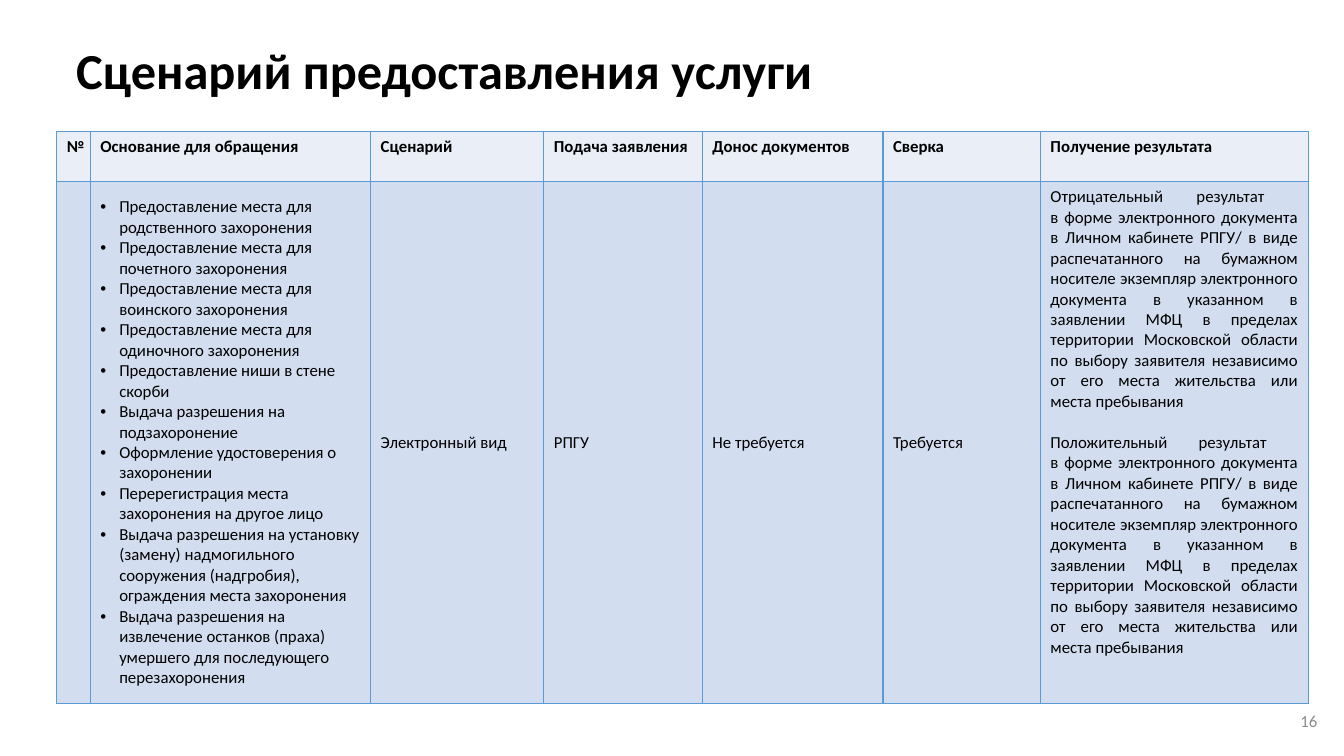
"""Build the service scenario slide with its table."""
import pptx
import pptx.util
import pptx.dml.color
import pptx.enum.text
import pptx.oxml.ns
import lxml.etree

PX = 9525
HUES = {"text": "000000", "head": "EAEFF7", "body": "D2DEEF",
        "line": "5B9BD5", "page": "8C8C8C"}
ALIGN = pptx.enum.text.PP_ALIGN
ANCHOR = pptx.enum.text.MSO_ANCHOR
RGB = pptx.dml.color.RGBColor.from_string


def style(para, size, hue="text", bold=False, align=ALIGN.LEFT):
    para.alignment = align
    for run in para.runs:
        run.font.name = "Calibri"
        run.font.size = pptx.util.Pt(size)
        run.font.bold = bold
        run.font.color.rgb = RGB(HUES[hue])


def add(parent, tag, **attrs):
    return lxml.etree.SubElement(parent, pptx.oxml.ns.qn(tag), attrs)


deck = pptx.Presentation()
deck.slide_width = 1280 * PX
deck.slide_height = 720 * PX
slide = deck.slides.add_slide(deck.slide_layouts[5])

title = slide.shapes.title
title.left, title.top, title.width, title.height = [n * PX for n in (63, 0, 1104, 139)]
title.text_frame.text = "Сценарий предоставления услуги"
title.text_frame.vertical_anchor = ANCHOR.MIDDLE
title.text_frame.auto_size = pptx.enum.text.MSO_AUTO_SIZE.NONE
title.text_frame.paragraphs[0].line_spacing = 0.9
style(title.text_frame.paragraphs[0], 36, bold=True)

heads = ["№", "Основание для обращения", "Сценарий", "Подача заявления",
         "Донос документов", "Сверка", "Получение результата"]
grounds = [
    "Предоставление места для родственного захоронения",
    "Предоставление места для почетного захоронения",
    "Предоставление места для воинского захоронения",
    "Предоставление места для одиночного захоронения",
    "Предоставление ниши в стене скорби",
    "Выдача разрешения на подзахоронение",
    "Оформление удостоверения о захоронении",
    "Перерегистрация места захоронения на другое лицо",
    "Выдача разрешения на установку (замену) надмогильного сооружения "
    "(надгробия), ограждения места захоронения",
    "Выдача разрешения на извлечение останков (праха) умершего для "
    "последующего перезахоронения",
]
form = ("в форме электронного документа в Личном кабинете РПГУ/ в виде "
        "распечатанного на бумажном носителе экземпляр электронного документа "
        "в указанном в заявлении МФЦ в пределах территории Московской области "
        "по выбору заявителя независимо от его места жительства или места "
        "пребывания")
results = [f"{kind} результат \v{form}" for kind in ("Отрицательный", "Положительный")]
rows = [[[head] for head in heads],
        [[], grounds, ["Электронный вид"], ["РПГУ"], ["Не требуется"],
         ["Требуется"], results]]
widths = [32, 267, 165, 151, 172, 150, 255]
heights = [48, 497]

table = slide.shapes.add_table(len(rows), len(widths), 54 * PX, 125 * PX,
                               sum(widths) * PX, sum(heights) * PX).table
table.first_row = False
table.horz_banding = False
for col, width in zip(table.columns, widths):
    col.width = width * PX
for row, height in zip(table.rows, heights):
    row.height = height * PX

for r, row in enumerate(rows):
    for c, lines in enumerate(row):
        cell = table.cell(r, c)
        props = cell._tc.get_or_add_tcPr()
        for side in "LRTB":
            edge = add(props, f"a:ln{side}", w="12700")
            add(add(edge, "a:solidFill"), "a:srgbClr", val=HUES["line"])
        cell.fill.solid()
        cell.fill.fore_color.rgb = RGB(HUES["body" if r else "head"])
        top = r == 0 or lines is results
        cell.vertical_anchor = ANCHOR.TOP if top else ANCHOR.MIDDLE
        cell.text_frame.text = "\n".join(lines)
        for para in cell.text_frame.paragraphs:
            style(para, 12, bold=r == 0,
                  align=ALIGN.JUSTIFY if lines is results else ALIGN.LEFT)

for para in table.cell(1, 1).text_frame.paragraphs:
    props = para._p.get_or_add_pPr()
    props.set("marL", str(18 * PX))
    props.set("indent", str(-18 * PX))
    add(props, "a:buFont", typeface="Arial")
    add(props, "a:buChar", char="•")
table.cell(1, 6).text_frame.paragraphs[0].space_after = pptx.util.Pt(14.65)

page = slide.shapes.add_textbox(904 * PX, 667 * PX, 360 * PX, 38 * PX).text_frame
page.word_wrap = True
page.vertical_anchor = ANCHOR.MIDDLE
page.text = "16"
style(page.paragraphs[0], 12, "page", align=ALIGN.RIGHT)

deck.save("out.pptx")
